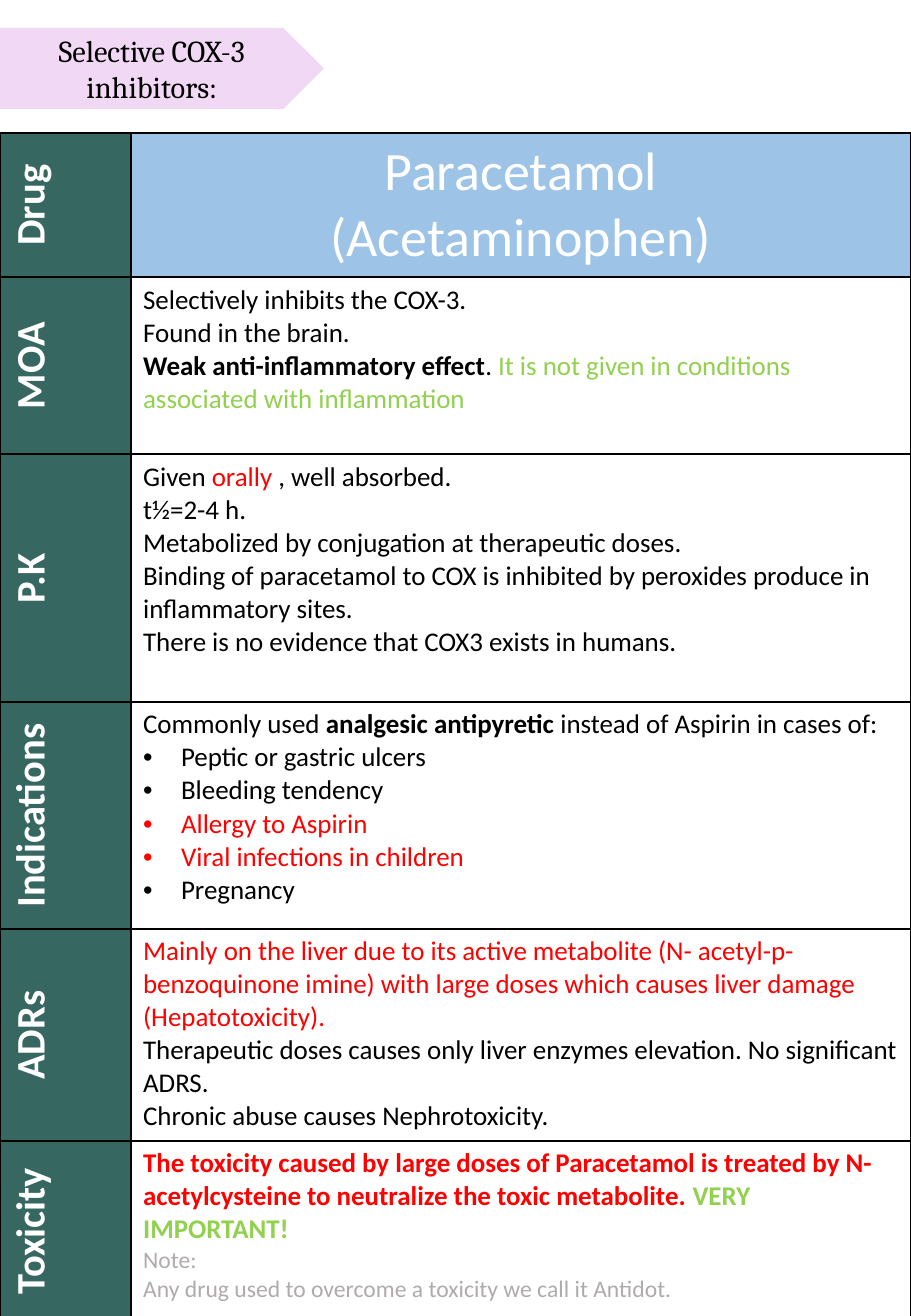
import lxml.etree
import pptx
import pptx.dml.color
import pptx.enum.shapes
import pptx.enum.text
import pptx.oxml.ns
import pptx.util

RGBColor = pptx.dml.color.RGBColor
BLACK = RGBColor(0x00, 0x00, 0x00)
WHITE = RGBColor(0xFF, 0xFF, 0xFF)
RED = RGBColor(0xFF, 0x00, 0x00)
LIME = RGBColor(0x92, 0xD0, 0x50)
GREY = RGBColor(0xAF, 0xAB, 0xAB)
LILAC = RGBColor(0xF1, 0xD8, 0xF4)
TEAL = RGBColor(0x37, 0x67, 0x61)
SKY = RGBColor(0x9D, 0xC3, 0xE6)

CENTER = pptx.enum.text.PP_ALIGN.CENTER
MIDDLE = pptx.enum.text.MSO_ANCHOR.MIDDLE
SLIDE_WIDTH, SLIDE_HEIGHT = 911, 1316
LABEL_WIDTH = 131
BULLET_INDENT = 38

DRUG_NAME = ["Paracetamol", "(Acetaminophen)"]

# Each paragraph: size, bulleted, runs of (text, colour, bold).
def plain(text, color=BLACK, size=16, bullet=False):
    """Return a paragraph made of a single regular run."""
    return size, bullet, [(text, color, False)]


SECTIONS = [
    ("MOA", 177, [
        plain("Selectively inhibits the COX-3."),
        plain("Found in the brain."),
        (16, False, [
            ("Weak anti-inflammatory effect", BLACK, True),
            (". ", BLACK, False),
            ("It is not given in conditions associated with inflammation", LIME, False)]),
    ]),
    ("P.K", 248, [
        (16, False, [
            ("Given ", BLACK, False),
            ("orally", RED, False),
            (" , well absorbed.", BLACK, False)]),
        plain("t½=2-4 h."),
        plain("Metabolized by conjugation at therapeutic doses."),
        plain("Binding of paracetamol to COX is inhibited by peroxides produce in "
              "inflammatory sites."),
        plain("There is no evidence that COX3 exists in humans."),
    ]),
    ("Indications", 227, [
        (16, False, [
            ("Commonly used ", BLACK, False),
            ("analgesic antipyretic ", BLACK, True),
            ("instead of Aspirin in cases of:", BLACK, False)]),
        plain("Peptic or gastric ulcers", bullet=True),
        plain("Bleeding tendency", bullet=True),
        plain("Allergy to Aspirin", RED, bullet=True),
        plain("Viral infections in children", RED, bullet=True),
        plain("Pregnancy", bullet=True),
    ]),
    ("ADRs", 212, [
        plain("Mainly on the liver due to its active metabolite (N- acetyl-p-benzoquinone "
              "imine) with large doses which causes liver damage (Hepatotoxicity).", RED),
        plain("Therapeutic doses causes only liver enzymes elevation. No significant ADRS."),
        plain("Chronic abuse causes Nephrotoxicity."),
    ]),
    ("Toxicity", 180, [
        (16, False, [
            ("The toxicity caused by large doses of Paracetamol is treated by N- "
             "acetylcysteine to neutralize the toxic metabolite. ", RED, True),
            ("VERY IMPORTANT!", LIME, True)]),
        plain("Note:", GREY, 14),
        plain("Any drug used to overcome a toxicity we call it Antidot.", GREY, 14),
    ]),
]
DRUG_HEIGHT = 144


def px(length):
    """Turn pixels into EMU."""
    return pptx.util.Emu(round(length * 914400 / 121.5))


def style_font(font, size, color, bold=False, name="Calibri"):
    """Set the look of a font."""
    font.name = name
    font.size = pptx.util.Pt(size)
    font.bold = bold
    font.color.rgb = color


def add_child(parent, tag, **attributes):
    """Append an XML element with the given attributes."""
    return lxml.etree.SubElement(parent, pptx.oxml.ns.qn(tag), **attributes)


def format_cell(cell, fill):
    """Give a cell black borders and a solid fill."""
    properties = cell._tc.get_or_add_tcPr()
    for side in ("a:lnL", "a:lnR", "a:lnT", "a:lnB"):
        line = add_child(properties, side, w=str(pptx.util.Pt(1)))
        add_child(add_child(line, "a:solidFill"), "a:srgbClr", val=str(BLACK))
    cell.fill.solid()
    cell.fill.fore_color.rgb = fill


def write_centered(cell, lines, size, bold):
    """Fill a cell with centred white lines."""
    cell.text = "\n".join(lines)
    for paragraph in cell.text_frame.paragraphs:
        paragraph.alignment = CENTER
        style_font(paragraph.font, size, WHITE, bold)


def write_label(cell, text):
    """Write a row label that reads upwards."""
    format_cell(cell, TEAL)
    cell._tc.get_or_add_tcPr().set("vert", "vert270")
    write_centered(cell, [text], 24, True)


def write_details(cell, paragraphs):
    """Write the paragraphs of one section."""
    format_cell(cell, WHITE)
    frame = cell.text_frame
    for index, (size, bullet, runs) in enumerate(paragraphs):
        paragraph = frame.add_paragraph() if index else frame.paragraphs[0]
        if bullet:
            properties = paragraph._p.get_or_add_pPr()
            properties.set("marL", str(px(BULLET_INDENT)))
            properties.set("indent", str(-px(BULLET_INDENT)))
            add_child(properties, "a:buFont", typeface="Arial")
            add_child(properties, "a:buChar", char="•")
        for text, color, bold in runs:
            run = paragraph.add_run()
            run.text = text
            style_font(run.font, size, color, bold)


def add_heading(slide, left, top, width, height):
    """Draw the arrow-shaped heading."""
    shape = slide.shapes.add_shape(
        pptx.enum.shapes.MSO_SHAPE.PENTAGON, px(left), px(top), px(width), px(height))
    shape.shadow.inherit = False
    shape.fill.solid()
    shape.fill.fore_color.rgb = LILAC
    shape.line.fill.background()
    frame = shape.text_frame
    frame.word_wrap = True
    frame.vertical_anchor = MIDDLE
    paragraph = frame.paragraphs[0]
    paragraph.text = "Selective COX-3 inhibitors:"
    paragraph.alignment = CENTER
    style_font(paragraph.font, 18, BLACK, name="Cambria")


def add_drug_table(slide, left, top, width):
    """Draw the table that describes the drug."""
    heights = [DRUG_HEIGHT] + [height for _, height, _ in SECTIONS]
    table = slide.shapes.add_table(
        len(heights), 2, px(left), px(top), px(width), px(sum(heights))).table
    table.first_row = False
    table.horz_banding = False
    table.columns[0].width = px(LABEL_WIDTH)
    table.columns[1].width = px(width - LABEL_WIDTH)
    for row, height in zip(table.rows, heights):
        row.height = px(height)
    write_label(table.cell(0, 0), "Drug")
    drug_cell = table.cell(0, 1)
    format_cell(drug_cell, SKY)
    drug_cell.vertical_anchor = MIDDLE
    write_centered(drug_cell, DRUG_NAME, 32, False)
    for index, (label, _, paragraphs) in enumerate(SECTIONS, start=1):
        write_label(table.cell(index, 0), label)
        write_details(table.cell(index, 1), paragraphs)


def main():
    """Build the slide and save it."""
    presentation = pptx.Presentation()
    presentation.slide_width = px(SLIDE_WIDTH)
    presentation.slide_height = px(SLIDE_HEIGHT)
    slide = presentation.slides.add_slide(presentation.slide_layouts[6])
    add_heading(slide, 0, 28, 324, 81)
    add_drug_table(slide, 0, 133, SLIDE_WIDTH)
    presentation.save("out.pptx")


if __name__ == "__main__":
    main()
